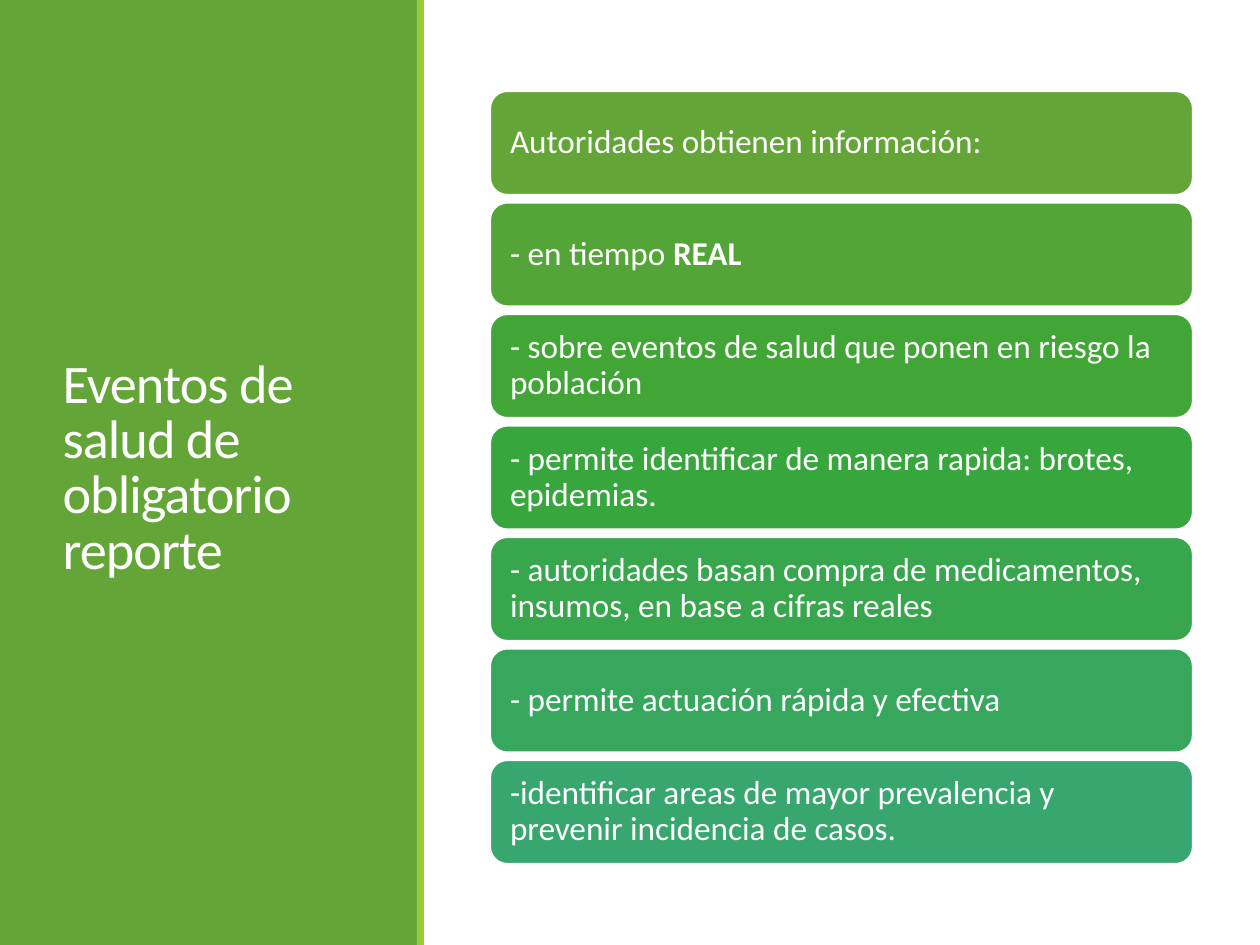
from pptx import Presentation
from pptx.dml.color import RGBColor
from pptx.enum.shapes import MSO_SHAPE
from pptx.enum.text import MSO_ANCHOR, MSO_AUTO_SIZE, PP_ALIGN
from pptx.util import Emu, Pt

PX_PER_INCH = 126
WHITE, GREEN, LIME = "FFFFFF", "63A537", "99CB38"

# Each card: fill colour, then runs of (text, bold)
CARDS = [
    (GREEN, [("Autoridades obtienen información:", False)]),
    ("53A537", [("- en tiempo ", False), ("REAL", True)]),
    ("42A637", [("- sobre eventos de salud que ponen en riesgo la población", False)]),
    ("37A63D", [("- permite identificar de manera rapida: brotes, epidemias.", False)]),
    ("37A64D", [("- autoridades basan compra de medicamentos, insumos, en base a cifras reales", False)]),
    ("37A75E", [("- permite actuación rápida y efectiva", False)]),
    ("37A76F", [("-identificar areas de mayor prevalencia y prevenir incidencia de casos.", False)]),
]
FIRST_CARD_TOP, LAST_CARD_TOP = 91, 760


def px(length):
    return Emu(round(length * 914400 / PX_PER_INCH))


def color(value):
    return RGBColor.from_string(value)


class SlideBuilder:
    font_name = "Calibri"
    title_size = 31
    card_size = 19
    card_inset = 15

    def __init__(self, slide):
        self.slide = slide

    def background(self, fill):
        self.slide.background.fill.solid()
        self.slide.background.fill.fore_color.rgb = color(fill)

    def box(self, kind, left, top, width, height, fill):
        shape = self.slide.shapes.add_shape(kind, px(left), px(top), px(width), px(height))
        shape.shadow.inherit = False
        shape.fill.solid()
        shape.fill.fore_color.rgb = color(fill)
        shape.line.fill.background()
        return shape

    def set_text(self, frame, runs, size, line_spacing):
        """Fill the frame with one left-aligned, vertically centred paragraph."""
        frame.word_wrap = True
        frame.auto_size = MSO_AUTO_SIZE.NONE
        frame.vertical_anchor = MSO_ANCHOR.MIDDLE
        paragraph = frame.paragraphs[0]
        paragraph.alignment = PP_ALIGN.LEFT
        paragraph.line_spacing = line_spacing
        for text, bold in runs:
            run = paragraph.add_run()
            run.text = text
            run.font.name = self.font_name
            run.font.size = Pt(size)
            run.font.bold = bold
            run.font.color.rgb = color(WHITE)
        return paragraph

    def title(self, text, left, top, width, height):
        title = self.slide.shapes.title
        title.left, title.top = px(left), px(top)
        title.width, title.height = px(width), px(height)
        paragraph = self.set_text(title.text_frame, [(text, False)], self.title_size, 0.85)
        paragraph.runs[0]._r.get_or_add_rPr().set("spc", "-50")
        # Bring the title in front of the panel
        self.slide.shapes._spTree.append(title._element)

    def card(self, left, top, width, height, fill, runs):
        shape = self.box(MSO_SHAPE.ROUNDED_RECTANGLE, left, top, width, height, fill)
        shape.line.color.rgb = color(WHITE)
        shape.line.width = Pt(1.25)
        frame = shape.text_frame
        frame.margin_left = frame.margin_right = px(self.card_inset)
        frame.margin_top = frame.margin_bottom = px(self.card_inset)
        self.set_text(frame, runs, self.card_size, 0.9)


def main():
    presentation = Presentation()
    presentation.slide_width, presentation.slide_height = px(1260), px(945)
    builder = SlideBuilder(presentation.slides.add_slide(presentation.slide_layouts[5]))

    builder.background(WHITE)
    builder.box(MSO_SHAPE.RECTANGLE, 0, 0, 418, 945, GREEN)
    builder.title("Eventos de salud de obligatorio reporte", 50, 72, 319, 795)
    builder.box(MSO_SHAPE.RECTANGLE, 417, 0, 7, 945, LIME)

    pitch = (LAST_CARD_TOP - FIRST_CARD_TOP) / (len(CARDS) - 1)
    for index, (fill, runs) in enumerate(CARDS):
        builder.card(490, FIRST_CARD_TOP + index * pitch, 703, 104, fill, runs)

    presentation.save("out.pptx")


if __name__ == "__main__":
    main()
